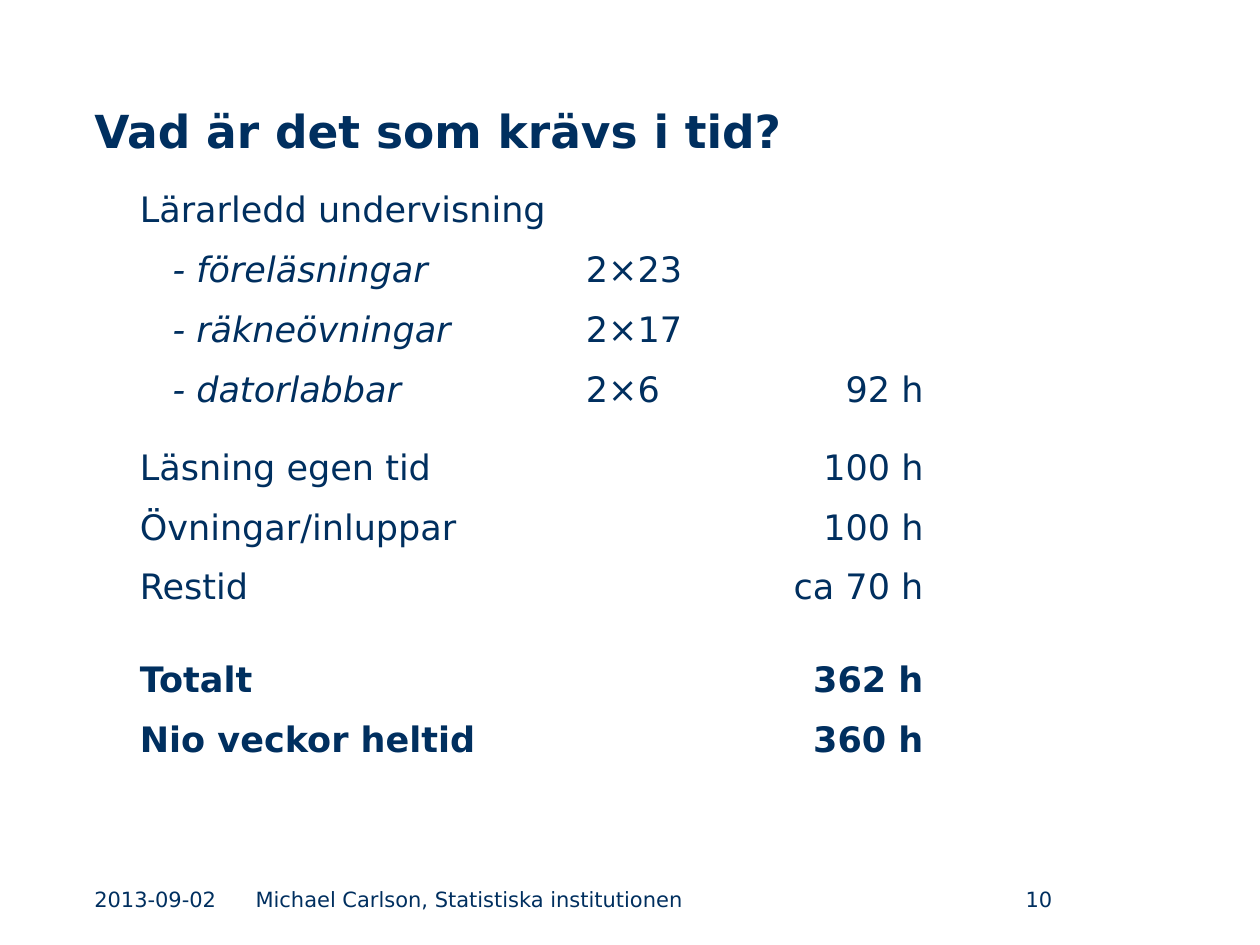
import pptx
import pptx.dml.color
import pptx.enum.text
import pptx.oxml.ns
import pptx.util
from lxml import etree

Inches = pptx.util.Inches
ALIGN = pptx.enum.text.PP_ALIGN
ANCHOR = pptx.enum.text.MSO_ANCHOR
NAVY = "002F5F"
FONT = "DejaVu Sans"

TITLE = "Vad är det som krävs i tid?"
# activity, sessions, hours, style
ROWS = [
    ("Lärarledd undervisning", "", "", "plain"),
    ("- föreläsningar", "2×23", "", "sub"),
    ("- räkneövningar", "2×17", "", "sub"),
    ("- datorlabbar", "2×6", "92 h", "sub"),
    ("Läsning egen tid", "", "100 h", "plain"),
    ("Övningar/inluppar", "", "100 h", "plain"),
    ("Restid", "", "ca 70 h", "plain"),
    ("", "", "", "gap"),
    ("Totalt", "", "362 h", "total"),
    ("Nio veckor heltid", "", "360 h", "total"),
]
COL_WIDTHS = [3.54, 1.18, 1.76]
TABLE_HEIGHT = 4.68
SPECIAL_HEIGHTS = {3: 0.62, 7: 0.26}
# text, left, width, alignment
FOOTER = [
    ("2013-09-02", 0.65, 1.23, ALIGN.LEFT),
    ("Michael Carlson, Statistiska institutionen", 1.93, 4.91, ALIGN.LEFT),
    ("10", 6.89, 1.56, ALIGN.RIGHT),
]


def rgb(value):
    return pptx.dml.color.RGBColor.from_string(value)


def write(tf, text, size=20, bold=False, italic=False, align=ALIGN.LEFT, indent=0):
    p = tf.paragraphs[0]
    p.alignment = align
    if indent:
        p._p.get_or_add_pPr().set("marL", str(Inches(indent)))
    if not text:  # keeps an empty line at the wanted size
        end = etree.SubElement(p._p, pptx.oxml.ns.qn("a:endParaRPr"))
        end.set("sz", str(size * 100))
        return
    r = p.add_run()
    r.text = text
    r.font.size = pptx.util.Pt(size)
    r.font.name = FONT
    r.font.bold = bold
    r.font.italic = italic
    r.font.color.rgb = rgb(NAVY)


def add_text(s, text, left, top, width, height, anchor=ANCHOR.MIDDLE, **fmt):
    box = s.shapes.add_textbox(*map(Inches, (left, top, width, height)))
    tf = box.text_frame
    tf.word_wrap = True
    tf.vertical_anchor = anchor
    write(tf, text, **fmt)


def add_time_table(s):
    table = s.shapes.add_table(
        len(ROWS), len(COL_WIDTHS), Inches(0.98), Inches(1.47),
        Inches(sum(COL_WIDTHS)), Inches(TABLE_HEIGHT)).table
    table.first_row = table.horz_banding = False
    for col, width in zip(table.columns, COL_WIDTHS):
        col.width = Inches(width)
    normal = (TABLE_HEIGHT - sum(SPECIAL_HEIGHTS.values())) / (len(ROWS) - len(SPECIAL_HEIGHTS))
    for i, (*texts, style) in enumerate(ROWS):
        table.rows[i].height = Inches(SPECIAL_HEIGHTS.get(i, normal))
        for j, text in enumerate(texts):
            cell = table.cell(i, j)
            cell.fill.background()
            cell.margin_left = cell.margin_right = Inches(0.13)
            cell.margin_top = cell.margin_bottom = Inches(0.04)
            sub = style == "sub" and j == 0
            write(cell.text_frame, text, size=8 if style == "gap" else 20,
                  bold=style == "total", italic=sub, indent=0.26 if sub else 0,
                  align=ALIGN.RIGHT if j == 2 else ALIGN.LEFT)


def main():
    prs = pptx.Presentation()
    prs.slide_width, prs.slide_height = Inches(10), Inches(7.5)
    s = prs.slides.add_slide(prs.slide_layouts[6])
    add_text(s, TITLE, 0.65, 0.43, 8.69, 0.87, anchor=ANCHOR.BOTTOM, size=26, bold=True)
    add_time_table(s)
    for text, left, width, align in FOOTER:
        add_text(s, text, left, 6.98, width, 0.31, size=12, align=align)
    prs.save("out.pptx")


if __name__ == "__main__":
    main()
